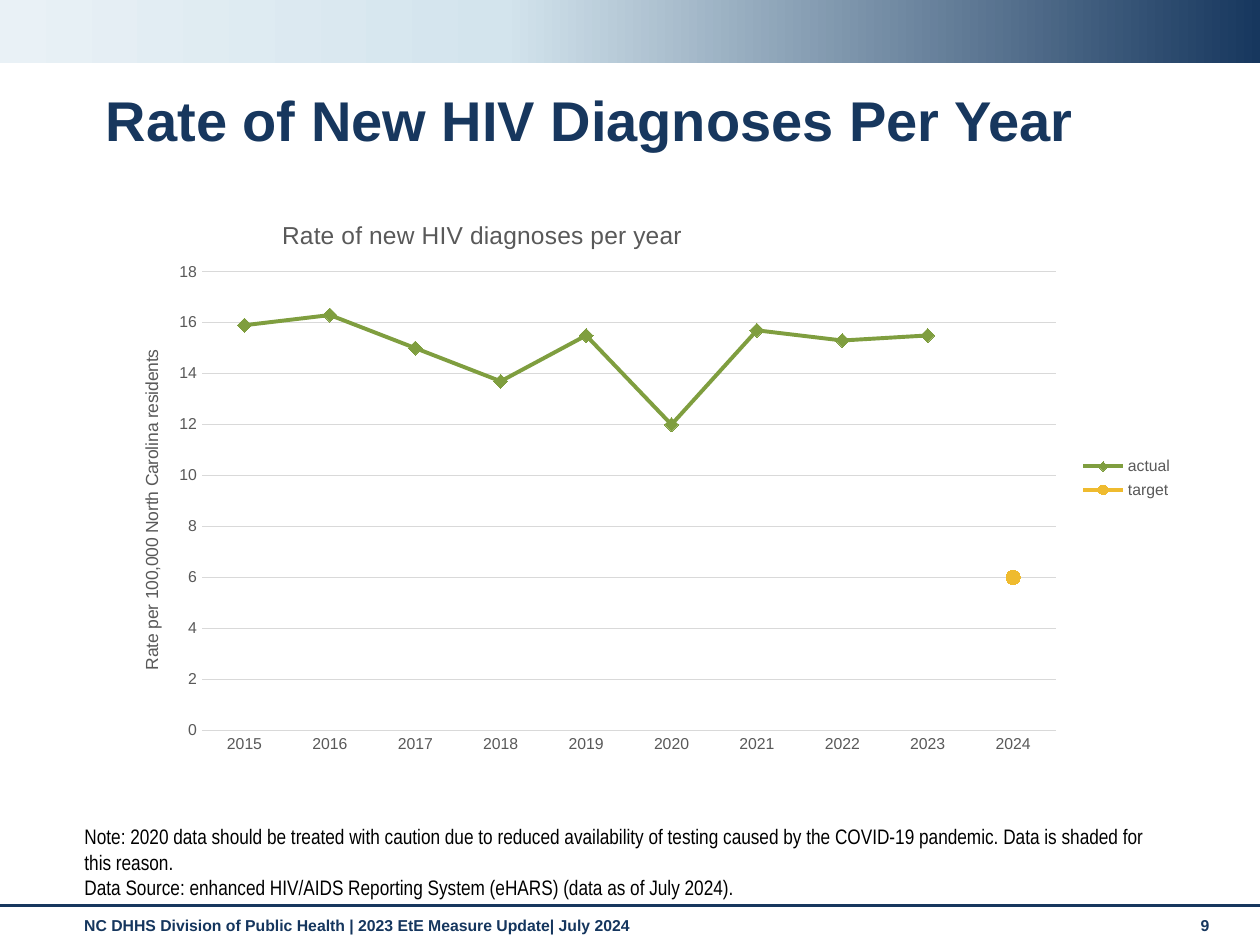
from lxml import etree
from pptx import Presentation
from pptx import util as u
from pptx.chart.data import CategoryChartData
from pptx.dml.color import RGBColor
from pptx.enum import chart as ch, shapes, text
from pptx.oxml import parse_xml
from pptx.oxml.ns import nsdecls, qn

COLORS = {
    "navy": "17375E", "footer": "15365E", "sky": "D3E4ED", "pale": "E9F1F6",
    "black": "000000", "gray": "595959", "grid": "D9D9D9", "white": "FFFFFF",
    "actual": "7F9E3F", "target": "EFBB2F",
}


def write(frame, content, size=9, color="gray", bold=False, font="Arial",
          anchor=text.MSO_ANCHOR.TOP, spacing=None):
    frame.word_wrap = True
    frame.auto_size = text.MSO_AUTO_SIZE.NONE
    frame.vertical_anchor = anchor
    for index, line in enumerate(content.split("\n")):
        para = frame.add_paragraph() if index else frame.paragraphs[0]
        para.alignment = text.PP_ALIGN.LEFT
        para.line_spacing = spacing
        para.space_before = u.Pt(0)
        span = para.add_run()
        span.text = line
        span.font.name, span.font.size, span.font.bold = font, u.Pt(size), bold
        span.font.color.rgb = RGBColor.from_string(COLORS[color])


def place(parent, index, **values):
    for old in parent.findall(qn("c:layout")):
        parent.remove(old)
    layout = etree.Element(qn("c:layout"))
    manual = etree.SubElement(layout, qn("c:manualLayout"))
    for name, value in values.items():
        etree.SubElement(manual, qn("c:" + name)).set("val", str(value))
    parent.insert(index, layout)


deck = Presentation()
deck.slide_width, deck.slide_height = u.Inches(10), u.Inches(7.5)
page = deck.slides.add_slide(deck.slide_layouts[1])

band = page.shapes.add_shape(shapes.MSO_SHAPE.RECTANGLE, 0, 0, u.Inches(10), u.Inches(0.5))
band.shadow.inherit = False
band.line.fill.background()
band.fill.gradient()
band.fill.gradient_angle = 180
stops = band.fill._fill._gradFill.find(qn("a:gsLst"))
for stop in list(stops):
    stops.remove(stop)
for position, name in ((0, "navy"), (60, "sky"), (100, "pale")):
    stops.append(parse_xml(
        f'<a:gs {nsdecls("a")} pos="{position * 1000}"><a:srgbClr val="{COLORS[name]}"/></a:gs>'))
band.fill._fill._gradFill.find(qn("a:lin")).set("ang", "10800000")

rule = page.shapes.add_connector(
    shapes.MSO_CONNECTOR.STRAIGHT, 0, u.Inches(7.19), u.Inches(10), u.Inches(7.19))
rule.line.color.rgb = RGBColor.from_string(COLORS["navy"])
rule.line.width = u.Pt(1.75)
etree.SubElement(rule._element.spPr, qn("a:effectLst"))

for left, width, words in (
    (0.57, 8.74, "NC DHHS Division of Public Health | 2023 EtE Measure Update| July 2024"),
    (9.43, 0.44, "9"),
):
    box = page.shapes.add_textbox(u.Inches(left), u.Inches(7.22), u.Inches(width), u.Inches(0.3))
    write(box.text_frame, words, color="footer", bold=True)

title, notes = page.shapes.title, page.placeholders[1]
for box, bounds in ((title, (0.74, 0.68, 8.58, 0.6)), (notes, (0.57, 6.83, 8.74, 0.36))):
    box.left, box.top, box.width, box.height = map(u.Inches, bounds)
write(title.text_frame, "Rate of New HIV Diagnoses Per Year", size=32, color="navy",
      bold=True, anchor=text.MSO_ANCHOR.MIDDLE, spacing=0.9)
write(notes.text_frame,
      "Note: 2020 data should be treated with caution due to reduced availability of testing "
      "caused by the COVID-19 pandemic. Data is shaded for this reason.\n"
      "Data Source: enhanced HIV/AIDS Reporting System (eHARS) (data as of July 2024).",
      size=12, color="black", font="Arial Narrow", anchor=text.MSO_ANCHOR.BOTTOM)
for para in notes.text_frame.paragraphs:
    properties = para._p.get_or_add_pPr()
    properties.set("marL", "0")
    properties.set("indent", "0")
    etree.SubElement(properties, qn("a:buNone"))

data = CategoryChartData()
data.categories = [str(year) for year in range(2015, 2025)]
data.add_series("actual", [15.9, 16.3, 15, 13.7, 15.5, 12, 15.7, 15.3, 15.5, None])
data.add_series("target", [None] * 9 + [6])
chart = page.shapes.add_chart(
    ch.XL_CHART_TYPE.LINE_MARKERS, u.Inches(0.83), u.Inches(1.52),
    u.Inches(8.58), u.Inches(4.55), data).chart
chart.font.name, chart.font.size = "Arial", u.Pt(9)
chart.font.color.rgb = RGBColor.from_string(COLORS["gray"])
chart.has_legend = True
chart.legend.position = ch.XL_LEGEND_POSITION.RIGHT
chart.legend.include_in_layout = False

years, rates = chart.category_axis, chart.value_axis
rates.minimum_scale, rates.maximum_scale, rates.major_unit = 0, 18, 2
for axis in (years, rates):
    axis.major_tick_mark = axis.minor_tick_mark = ch.XL_TICK_MARK.NONE
rates.format.line.fill.background()
for line in (years.format.line, rates.major_gridlines.format.line):
    line.color.rgb = RGBColor.from_string(COLORS["grid"])
    line.width = u.Pt(0.75)

chart.has_title = rates.has_title = True
for heading, words, size, x, y in (
    (chart.chart_title, "Rate of new HIV diagnoses per year", 14, 0.16, 0.04),
    (rates.axis_title, "Rate per 100,000 North Carolina residents", 10, 0.03, 0.27),
):
    span = heading.text_frame.paragraphs[0].add_run()
    span.text = words
    span.font.name, span.font.size, span.font.bold = "Arial", u.Pt(size), False
    span.font.color.rgb = RGBColor.from_string(COLORS["gray"])
    place(heading._element, 1, xMode="edge", yMode="edge", x=x, y=y)
rates.axis_title.text_frame._txBody.bodyPr.set("rot", "-5400000")
rates.axis_title.text_frame._txBody.bodyPr.set("vert", "horz")
place(chart._chartSpace.chart.plotArea, 0, layoutTarget="inner", xMode="edge", yMode="edge",
      x=0.09, y=0.14, w=0.79, h=0.8)

chart.plots[0].vary_by_categories = False
markers = (ch.XL_MARKER_STYLE.DIAMOND, ch.XL_MARKER_STYLE.CIRCLE)
for series, style in zip(chart.plots[0].series, markers):
    color = RGBColor.from_string(COLORS[series.name])
    series.smooth = False
    series.format.line.color.rgb = color
    series.format.line.width = u.Pt(2.25)
    series.marker.style, series.marker.size = style, 8
    series.marker.format.fill.solid()
    series.marker.format.fill.fore_color.rgb = color
    series.marker.format.line.color.rgb = color

deck.save("out.pptx")
